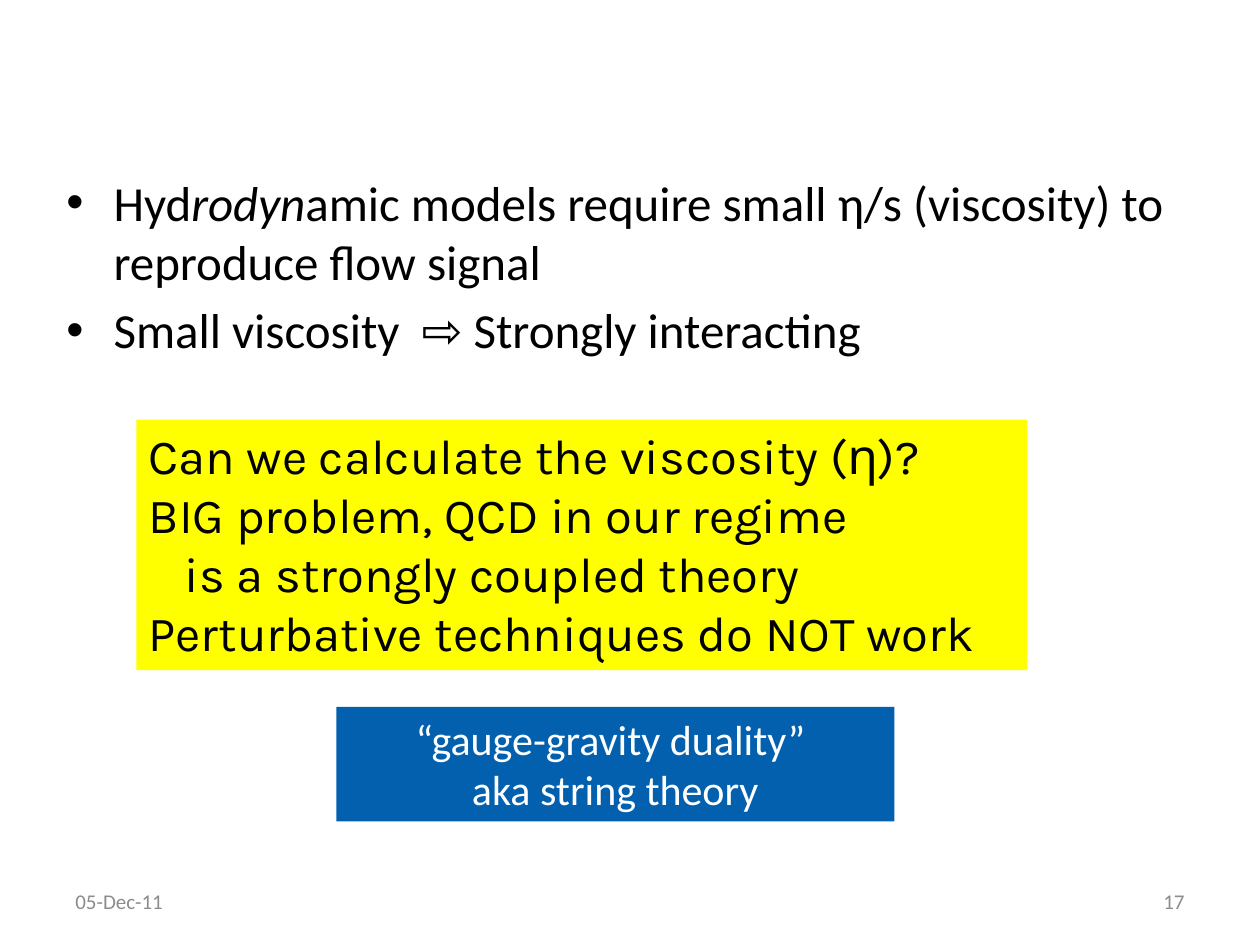
from lxml import etree
from pptx import Presentation
from pptx.dml.color import RGBColor
from pptx.enum.text import MSO_ANCHOR, PP_ALIGN
from pptx.oxml.ns import qn
from pptx.util import Cm, Pt

LEFT, CENTER, RIGHT = PP_ALIGN.LEFT, PP_ALIGN.CENTER, PP_ALIGN.RIGHT
TOP, MIDDLE = MSO_ANCHOR.TOP, MSO_ANCHOR.MIDDLE
COLORS = {"black": "000000", "white": "FFFFFF", "yellow": "FFFF00",
          "blue": "0260AE", "gray": "8C8C8C"}

prs = Presentation()
prs.slide_width, prs.slide_height = Cm(25.4), Cm(19.05)
s = prs.slides.add_slide(prs.slide_layouts[6])


def add_text(box, paragraphs, font, color, align=LEFT, anchor=TOP, fill=None):
    """Add a text box; each paragraph is a list of (text, italic) runs."""
    sp = s.shapes.add_textbox(*[Cm(v) for v in box])
    if fill:
        sp.fill.solid()
        sp.fill.fore_color.rgb = RGBColor.from_string(COLORS[fill])
    tf = sp.text_frame
    tf.word_wrap = True
    tf.vertical_anchor = anchor
    for i, runs in enumerate(paragraphs):
        p = tf.paragraphs[0] if i == 0 else tf.add_paragraph()
        p.alignment = align
        for text, italic in runs:
            r = p.add_run()
            r.text = text
            for name, value in {**font, "italic": italic}.items():
                setattr(r.font, name, value)
            r.font.color.rgb = RGBColor.from_string(COLORS[color])
    return tf


def set_indent(p, left, first=0, bullet=None):
    pPr = p._p.get_or_add_pPr()
    pPr.set("marL", str(Cm(left)))
    pPr.set("indent", str(Cm(first)))
    if bullet:
        etree.SubElement(pPr, qn("a:buFont")).set("typeface", "Arial")
        etree.SubElement(pPr, qn("a:buChar")).set("char", bullet)


# Bulleted body
body = [
    [("Hyd", False), ("rodyn", True),
     ("amic models require small η/s (viscosity) to reproduce flow signal", False)],
    [("Small viscosity  ⇨ Strongly interacting", False)],
]
tf = add_text((1.09, 3.35, 22.86, 12.57), body,
              {"name": "Calibri", "size": Pt(28)}, "black")
for p in tf.paragraphs:
    p.space_before = Pt(5.6)
    set_indent(p, 0.95, -0.95, "•")

# Yellow question box, with its third line indented
question = ["Can we calculate the viscosity (η)?", "BIG problem, QCD in our regime",
            "is a strongly coupled theory", "Perturbative techniques do NOT work"]
tf = add_text((2.75, 8.46, 17.96, 5.05), [[(line, False)] for line in question],
              {"name": "Karla", "size": Pt(28)}, "black", fill="yellow")
set_indent(tf.paragraphs[2], 0.73)

# Blue answer box
answer = ["“gauge-gravity duality” ", "aka string theory"]
add_text((6.78, 14.25, 11.25, 2.31), [[(line, False)] for line in answer],
         {"name": "Calibri", "size": Pt(24)}, "white", CENTER, fill="blue")

# Footer: date and slide number
for left, text, align in ((1.27, "05-Dec-11", LEFT), (18.2, "17", RIGHT)):
    add_text((left, 17.66, 5.93, 1.01), [[(text, False)]],
             {"name": "Calibri", "size": Pt(12)}, "gray", align, MIDDLE)

prs.save("out.pptx")
